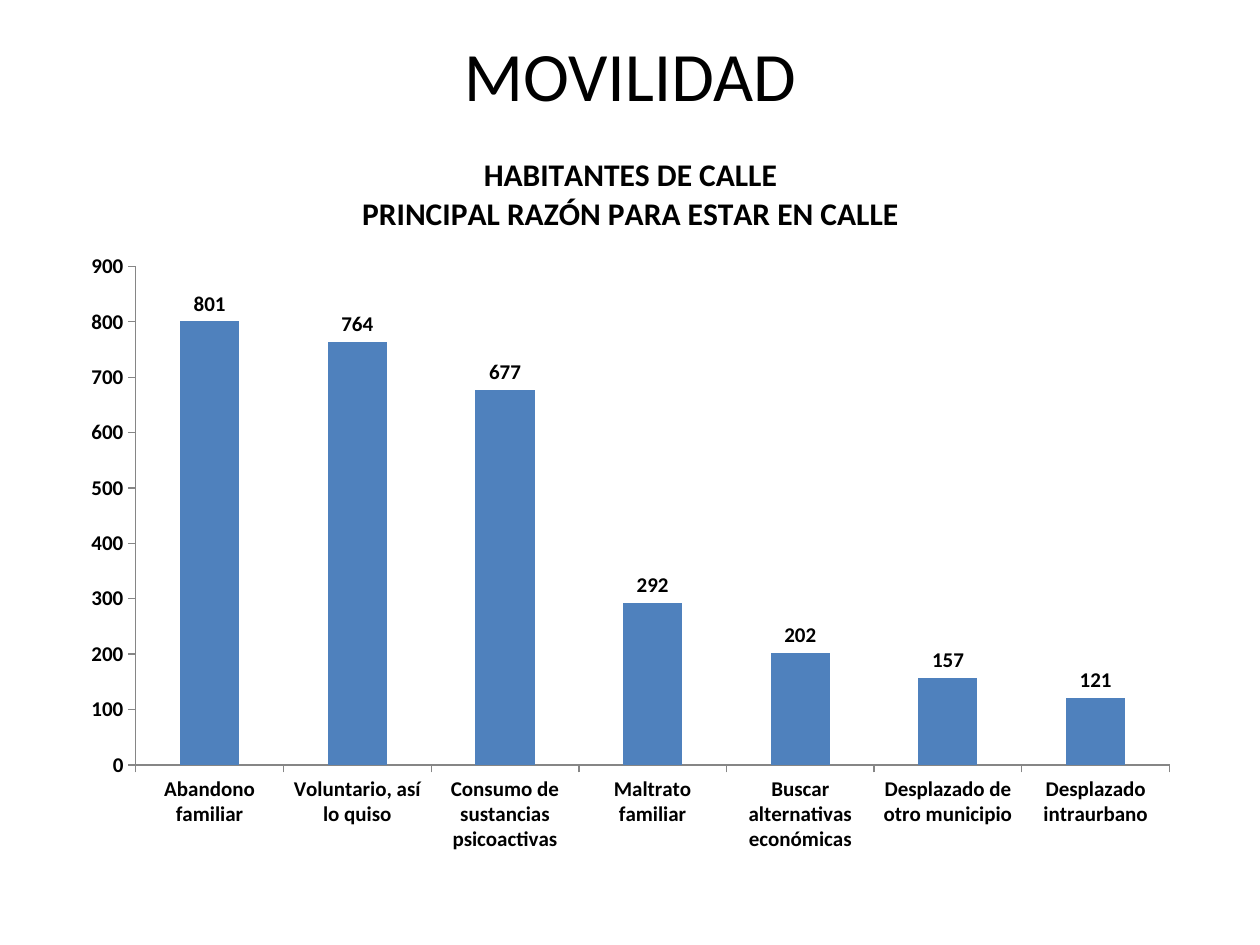
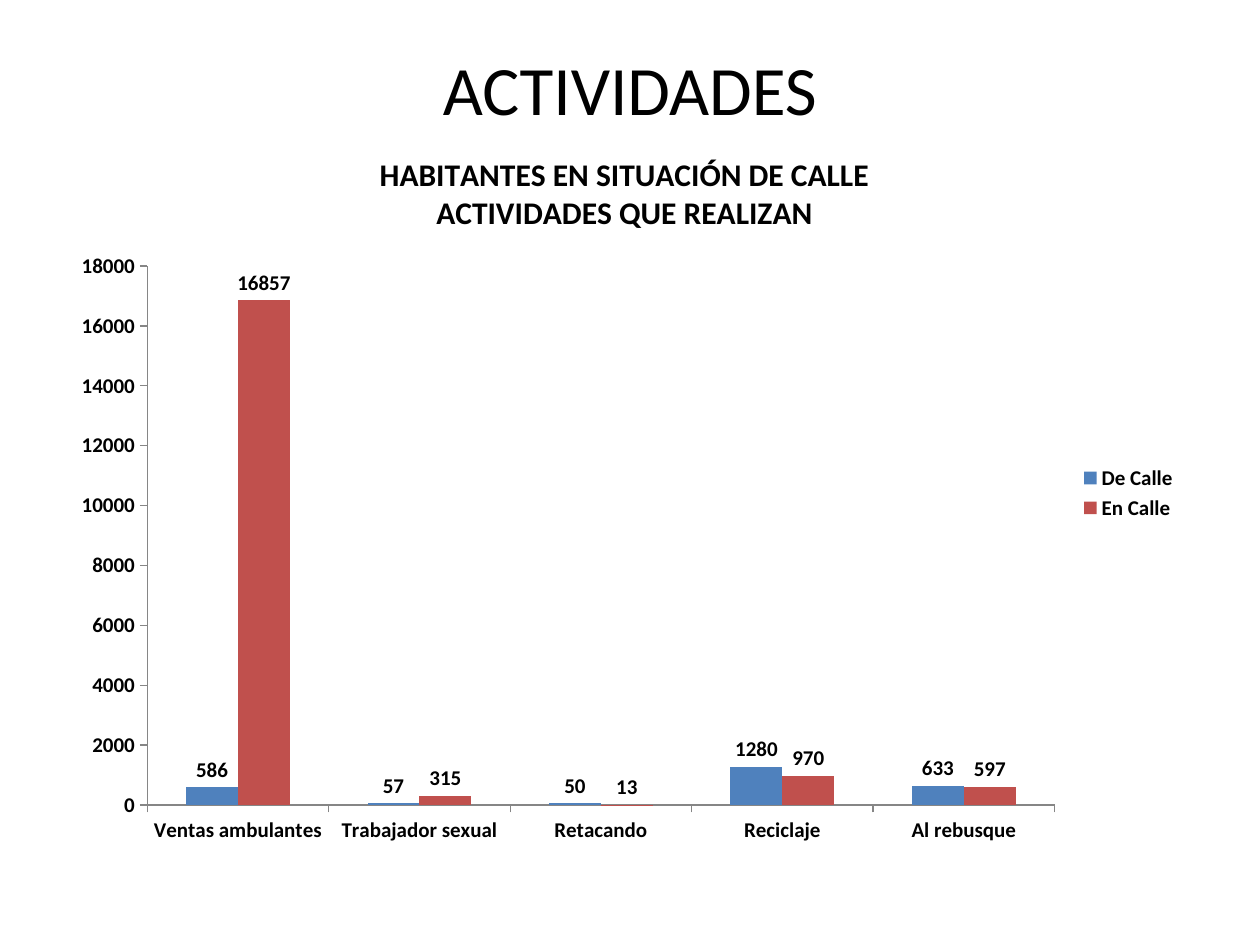
from pptx import Presentation
from pptx import util as u
from pptx.chart.data import CategoryChartData
from pptx.dml.color import RGBColor
from pptx.enum import chart as ch, text

BLACK = RGBColor(0x00, 0x00, 0x00)
GREY = RGBColor(0x86, 0x86, 0x86)
BLUE = RGBColor(0x4F, 0x81, 0xBD)
RED = RGBColor(0xC0, 0x50, 0x4D)
FONT = "Calibri"
SCALE = 914400 / 126


def px(*sizes):
    """Turn pixel lengths into EMU."""
    return [u.Emu(round(size * SCALE)) for size in sizes]


def style(font, size, bold=True):
    font.name = FONT
    font.size = u.Pt(size)
    font.bold = bold
    font.color.rgb = BLACK


pages = [
    dict(
        title="MOVILIDAD", high=71, frame=(69, 129, 1123, 738),
        heads=["HABITANTES DE CALLE", "PRINCIPAL RAZÓN PARA ESTAR EN CALLE"],
        cats=["Abandono familiar", "Voluntario, así lo quiso",
              "Consumo de sustancias psicoactivas", "Maltrato familiar",
              "Buscar alternativas económicas", "Desplazado de otro municipio",
              "Desplazado intraurbano"],
        series={"Series 1": (801, 764, 677, 292, 202, 157, 121)},
        top=900, step=100,
    ),
    dict(
        title="ACTIVIDADES", high=100, frame=(59, 129, 1131, 728),
        heads=["HABITANTES EN SITUACIÓN DE CALLE", "ACTIVIDADES QUE REALIZAN"],
        cats=["Ventas ambulantes", "Trabajador sexual", "Retacando",
              "Reciclaje", "Al rebusque"],
        series={"De Calle": (586, 57, 50, 1280, 633),
                "En Calle": (16857, 315, 13, 970, 597)},
        top=18000, step=2000,
    ),
]

deck = Presentation()
deck.slide_width, deck.slide_height = px(1260, 945)

for page in pages:
    slide = deck.slides.add_slide(deck.slide_layouts[6])

    # Slide title
    frame = slide.shapes.add_textbox(*px(63, 38, 1134, page["high"])).text_frame
    frame.word_wrap = True
    frame.vertical_anchor = text.MSO_ANCHOR.MIDDLE
    para = frame.paragraphs[0]
    para.alignment = text.PP_ALIGN.CENTER
    run = para.add_run()
    run.text = page["title"]
    style(run.font, 39.6, bold=False)

    # Column chart
    data = CategoryChartData()
    data.categories = page["cats"]
    for name, vals in page["series"].items():
        data.add_series(name, vals)
    chart = slide.shapes.add_chart(
        ch.XL_CHART_TYPE.COLUMN_CLUSTERED, *px(*page["frame"]), data).chart
    style(chart.font, 12)

    # Chart title, one paragraph a line
    chart.has_title = True
    heads = chart.chart_title.text_frame
    for i, line in enumerate(page["heads"]):
        para = heads.add_paragraph() if i else heads.paragraphs[0]
        run = para.add_run()
        run.text = line
        style(run.font, 18)
    chart.chart_title.include_in_layout = False

    # Axes
    for axis in (chart.category_axis, chart.value_axis):
        axis.has_major_gridlines = False
        axis.major_tick_mark = ch.XL_TICK_MARK.OUTSIDE
        axis.minor_tick_mark = ch.XL_TICK_MARK.NONE
        axis.format.line.color.rgb = GREY
        axis.format.line.width = u.Pt(0.75)
        style(axis.tick_labels.font, 12)
    chart.value_axis.minimum_scale = 0
    chart.value_axis.maximum_scale = page["top"]
    chart.value_axis.major_unit = page["step"]

    # Bars and their values
    plot = chart.plots[0]
    plot.vary_by_categories = False
    plot.gap_width = 150
    plot.overlap = 0
    for bars, color in zip(plot.series, (BLUE, RED)):
        bars.format.fill.solid()
        bars.format.fill.fore_color.rgb = color
        bars.invert_if_negative = False
        labels = bars.data_labels
        labels.show_value = True
        labels.position = ch.XL_LABEL_POSITION.OUTSIDE_END
        style(labels.font, 12)

    chart.has_legend = len(page["series"]) > 1
    if chart.has_legend:
        chart.legend.position = ch.XL_LEGEND_POSITION.RIGHT
        chart.legend.include_in_layout = False
        style(chart.legend.font, 12)

deck.save("out.pptx")
